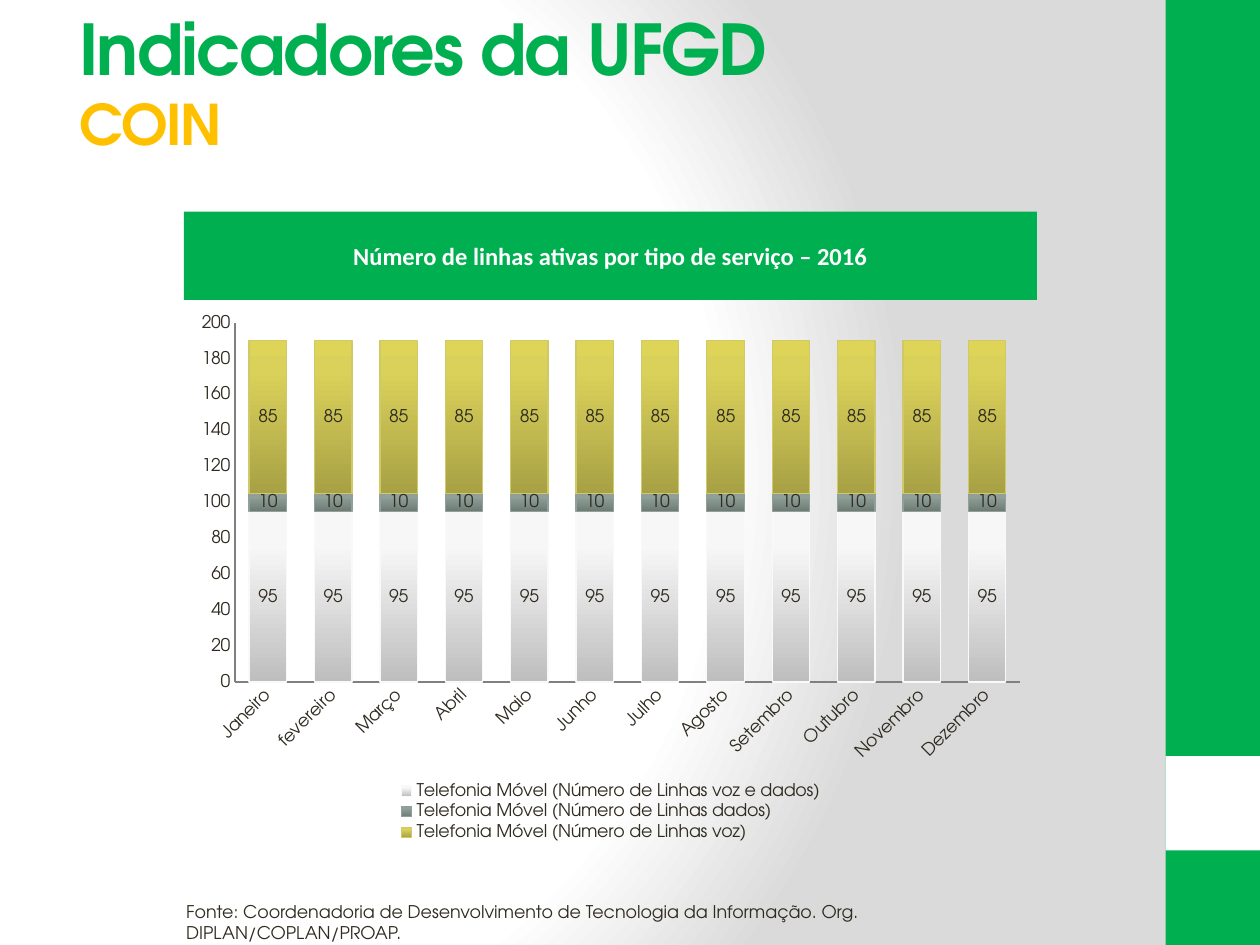
from pptx import Presentation
from pptx.chart.data import CategoryChartData
from pptx.dml.color import RGBColor
from pptx.enum.chart import XL_CHART_TYPE as ChartType, XL_LABEL_POSITION as LabelPosition
from pptx.enum.chart import XL_LEGEND_POSITION as LegendPosition, XL_TICK_MARK as TickMark
from pptx.enum.shapes import MSO_SHAPE as ShapeType
from pptx.enum.text import MSO_ANCHOR as Anchor, PP_ALIGN as Align
from pptx.oxml import parse_xml
from pptx.oxml.ns import nsdecls, qn
from pptx.util import Inches, Pt

COLORS = {"green": "00B050", "white": "FFFFFF", "gold": "FFC000", "text": "2F2B20",
          "axis": "808080", "grey": "DADADA"}
HEADING_FONT = "TeX Gyre Adventor"


def set_gradient(properties, stops, direction):
    """Replace the solid fill in a properties element by a gradient."""
    stop_xml = "".join(f'<a:gs pos="{position * 1000}"><a:srgbClr val="{color}"/></a:gs>'
                       for position, color in stops)
    gradient = parse_xml(f'<a:gradFill {nsdecls("a")} rotWithShape="1">'
                         f"<a:gsLst>{stop_xml}</a:gsLst>{direction}</a:gradFill>")
    properties.replace(properties.find(qn("a:solidFill")), gradient)


def add_run(paragraph, text, size, color, font=HEADING_FONT, bold=False):
    run = paragraph.add_run()
    run.text = text
    for name, value in {"size": Pt(size), "name": font, "bold": bold}.items():
        setattr(run.font, name, value)
    run.font.color.rgb = RGBColor.from_string(COLORS[color])
    return run


presentation = Presentation()
presentation.slide_width, presentation.slide_height = Inches(10), Inches(7.5)
slide = presentation.slides.add_slide(presentation.slide_layouts[6])

# Background
slide.background.fill.solid()
set_gradient(slide._element.find(".//" + qn("p:bgPr")),
             [(0, COLORS["white"]), (75, COLORS["white"]), (100, COLORS["grey"])],
             '<a:path path="circle"><a:fillToRect l="20000" t="50000" r="100000" b="50000"/></a:path>')

# Side band, its white square and the chart banner
rectangles = [(9.25, 0, 0.75, 7.5, "green"), (9.25, 6, 0.75, 0.75, "white"),
              (1.46, 1.68, 6.77, 0.7, "green")]
for left, top, width, height, color in rectangles:
    shape = slide.shapes.add_shape(ShapeType.RECTANGLE, Inches(left), Inches(top),
                                   Inches(width), Inches(height))
    shape.shadow.inherit = False
    shape.fill.solid()
    shape.fill.fore_color.rgb = RGBColor.from_string(COLORS[color])
    shape.line.fill.background()

banner = shape
banner.text_frame.vertical_anchor = Anchor.MIDDLE
paragraph = banner.text_frame.paragraphs[0]
paragraph.alignment = Align.CENTER
add_run(paragraph, "Número de linhas ativas por tipo de serviço – 2016", 14, "white", "Calibri", True)

# Title
title = slide.shapes.add_textbox(Inches(0.53), Inches(0.18), Inches(8.33), Inches(0.93))
title.text_frame.word_wrap = True
title.text_frame.vertical_anchor = Anchor.MIDDLE
paragraph = title.text_frame.paragraphs[0]
title_run = add_run(paragraph, "Indicadores da UFGD", 40, "green", bold=True)
paragraph.add_line_break()
subtitle_run = add_run(paragraph, "COIN", 32, "gold", bold=True)
for run in (title_run, subtitle_run):
    run.font._element.set("spc", "-100")

# Source note
source = slide.shapes.add_textbox(Inches(1.38), Inches(7.1), Inches(6.46), Inches(0.44))
source.text_frame.word_wrap = True
add_run(source.text_frame.paragraphs[0],
        "Fonte: Coordenadoria de Desenvolvimento de Tecnologia da Informação. "
        "Org. DIPLAN/COPLAN/PROAP.", 10, "text")

# Stacked chart: name, monthly value, gradient from bottom to top, outline
months = ["Janeiro", "fevereiro", "Março", "Abril", "Maio", "Junho", "Julho", "Agosto",
          "Setembro", "Outubro", "Novembro", "Dezembro"]
services = [
    ("voz e dados", 95, ("BEBEBE", "F7F7F7", "F8F8F8"), "F9F9F9"),
    ("dados", 10, ("6E7B75", "8EA098", "8FA199"), "91A09A"),
    ("voz", 85, ("A8A145", "DAD15A", "DED558"), "D0C967"),
]
chart_data = CategoryChartData(number_format="#,##0")
chart_data.categories = months
for service, lines, _, _ in services:
    chart_data.add_series(f"Telefonia Móvel (Número de Linhas {service})", [lines] * len(months))
chart = slide.shapes.add_chart(ChartType.COLUMN_STACKED, Inches(1.46), Inches(2.39),
                               Inches(6.77), Inches(4.32), chart_data).chart
chart.has_title = False
chart.font.size = Pt(10)
chart.font.name = HEADING_FONT
chart.font.color.rgb = RGBColor.from_string(COLORS["text"])
chart.has_legend = True
chart.legend.position = LegendPosition.BOTTOM
chart.legend.include_in_layout = False

for axis in (chart.category_axis, chart.value_axis):
    axis.major_tick_mark = axis.minor_tick_mark = TickMark.NONE
    axis.has_major_gridlines = False
    axis.format.line.color.rgb = RGBColor.from_string(COLORS["axis"])
chart.category_axis.tick_labels.font.size = Pt(10)
chart.category_axis._element.find(qn("c:txPr")).find(qn("a:bodyPr")).set("rot", "-2700000")
for name, value in {"minimum_scale": 0, "maximum_scale": 200, "major_unit": 20}.items():
    setattr(chart.value_axis, name, value)

plot = chart.plots[0]
plot.gap_width, plot.overlap = 75, 100
plot.vary_by_categories = False
for series, (_, _, gradient, outline) in zip(plot.series, services):
    series.format.fill.solid()
    set_gradient(series._element.find(qn("c:spPr")), zip((0, 80, 100), gradient),
                 '<a:lin ang="16200000" scaled="0"/>')
    series.format.line.color.rgb = RGBColor.from_string(outline)
    series.format.line.width = Pt(0.75)
    labels = series.data_labels
    labels.show_value = True
    labels.number_format, labels.number_format_is_linked = "#,##0", False
    labels.position = LabelPosition.CENTER

# Inner plot area as fractions of the chart
plot_area = chart._chartSpace.chart.plotArea
for layout in plot_area.findall(qn("c:layout")):
    plot_area.remove(layout)
fractions = "".join(f'<c:{name} val="{value}"/>' for name, value in
                    {"x": 0.06, "y": 0.04, "w": 0.92, "h": 0.66}.items())
plot_area.insert(0, parse_xml(
    f'<c:layout {nsdecls("c")}><c:manualLayout><c:layoutTarget val="inner"/>'
    f'<c:xMode val="edge"/><c:yMode val="edge"/>{fractions}</c:manualLayout></c:layout>'))

presentation.save("out.pptx")
